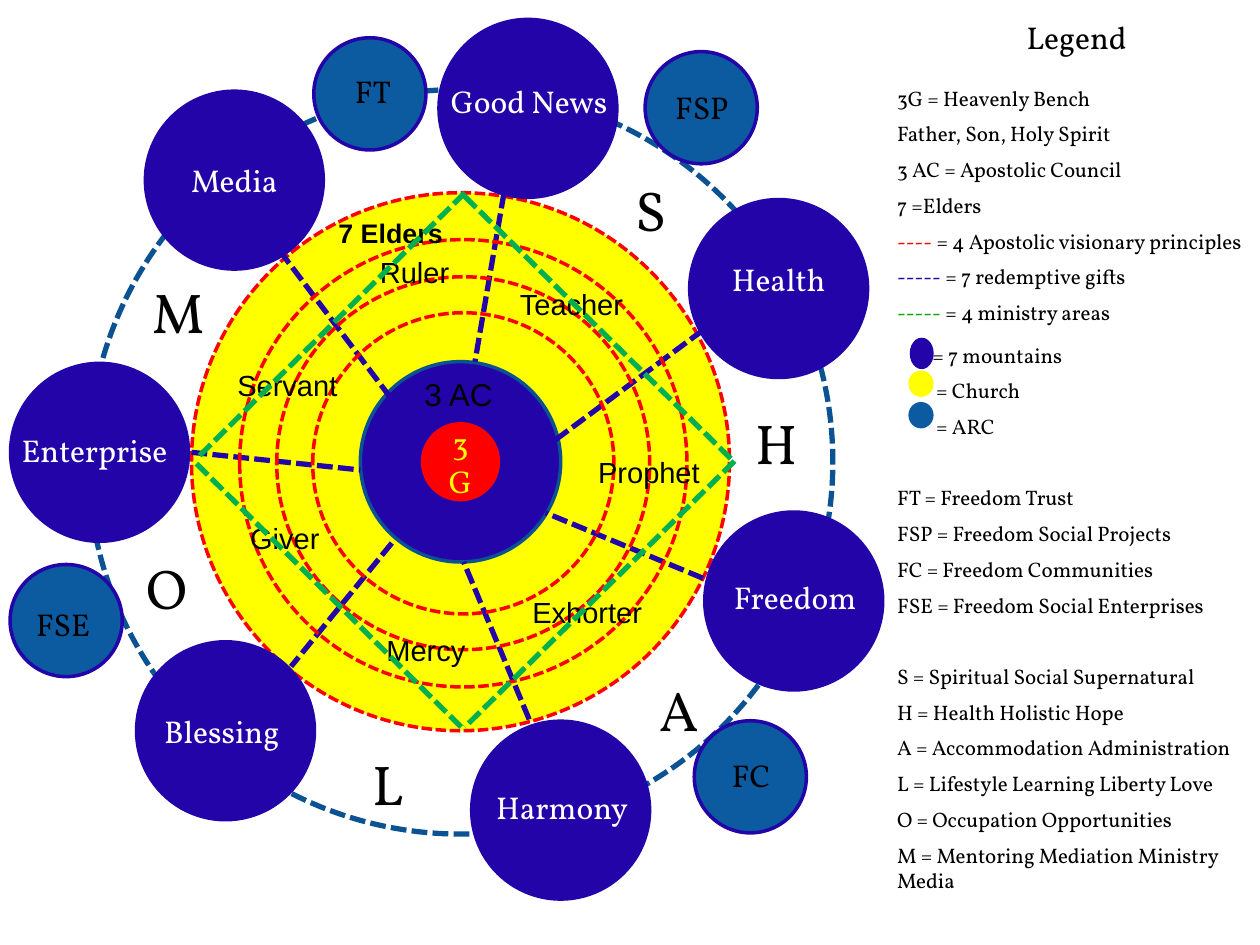
import pptx
import pptx.dml.color
import pptx.enum.dml
import pptx.enum.shapes
import pptx.enum.text
import pptx.oxml.ns
import pptx.util
import lxml.etree

COLUMNS, ROWS = 100, 75
CELL = pptx.util.Inches(0.1)
SERIF, SANS = "Vollkorn", "Arial"
COLORS = {
    "white": "FFFFFF", "black": "000000", "yellow": "FFFF00", "red": "FF0000",
    "navy": "2304A8", "orbit": "0B5292", "arc": "0C5AA0",
    "diamond": "00B050", "green": "00A800",
}
CENTER = (36.55, 36.65)
RING_CENTER = (36.77, 36.77)
RING_DIAMETERS = [23.9, 29.6, 35.5]
MOUNTAIN_DIAMETER, ARC_DIAMETER = 14.4, 8.9

MOUNTAINS = [
    ("Good News", (41.9, 8.6), (35.3, 6.5)),
    ("Freedom", (63, 47.7), (56.4, 45.9)),
    ("Harmony", (44.5, 64.3), (37.9, 62.5)),
    ("Enterprise", (7.9, 35.9), (0.8, 34.2)),
    ("Media", (18.6, 14.3), (11.9, 12.8)),
    ("Blessing", (17.9, 58), (10.9, 56.5)),
    ("Health", (61.8, 22.9), (55.1, 20.6)),
]
SPOKES = [
    ((40, 15.3), (37.7, 28.7)), ((55.8, 26.2), (44.1, 34.9)),
    ((22.2, 19.9), (31.1, 31.7)), ((15.2, 35.9), (28.6, 37.3)),
    ((55.8, 45.9), (43.3, 40.7)), ((42, 57.1), (36.8, 44.6)),
    ((31.1, 43.1), (23.1, 52.9)),
]
ARCS = [
    ("FSP", (55.65, 8.55), (53.3, 7)), ("FSE", (5.25, 49.25), (2.6, 48)),
    ("FC", (59.55, 61.65), (57.2, 60)), ("FT", (29.35, 7.45), (27.2, 5.7)),
]
LETTERS = [
    ("S", (47.3, 13.9)), ("H", (57.3, 32.4)), ("A", (49.6, 53.6)),
    ("L", (26.5, 59.5)), ("O", (8.9, 43.9)), ("M", (9.8, 22)),
]
GIFTS = [
    ("Ruler", (28.5, 20.2), 8.8), ("Servant", (18.4, 29.2), 8.8),
    ("Giver", (18.2, 41.3), 8.8), ("Mercy", (29.4, 50.2), 8.8),
    ("Exhorter", (41.4, 47.2), 10.4), ("Prophet", (47.1, 36.1), 8.8),
    ("Teacher", (40.1, 22.7), 10.5),
]
DIAMOND = [
    ((36.9, 15.3), (15.6, 36.4)), ((15.6, 36.8), (36.9, 58)),
    ((36.9, 15.6), (58.3, 36.7)), ((58.3, 36.6), (36.9, 57.7)),
]
LEGEND = [
    ("3G = Heavenly Bench", 17, 0), ("Father, Son, Holy Spirit", 0, 0),
    ("3 AC = Apostolic Council", 0, 0), ("7 =Elders", 0, 0),
    (("----", "red", " = 4 Apostolic visionary principles"), 0, 0),
    (("-----", "navy", " = 7 redemptive gifts"), 0, 0),
    (("-----", "green", " = 4 ministry areas"), 0, 0),
    ("= 7 mountains", 4, 2.8), ("= Church", 0, 3.1), ("= ARC", 0, 3.1),
    ("FT = Freedom Trust", 20.4, 0), ("FSP = Freedom Social Projects", 0, 0),
    ("FC = Freedom Communities", 0, 0), ("FSE = Freedom Social Enterprises", 0, 0),
    ("S = Spiritual Social Supernatural", 20.4, 0), ("H = Health Holistic Hope", 0, 0),
    ("A = Accommodation Administration", 0, 0),
    ("L = Lifestyle Learning Liberty Love", 0, 0),
    ("O = Occupation Opportunities", 0, 0),
    ("M = Mentoring Mediation Ministry Media", 0, 0),
]
SWATCHES = [
    ("navy", (73.15, 28.05), 1.9, 2.5), ("yellow", (73.1, 30.45), 2, 2.1),
    ("arc", (73.1, 32.95), 2, 2.1),
]


def cells(*counts):
    return [round(count * CELL) for count in counts]


def rgb(name):
    return pptx.dml.color.RGBColor.from_string(COLORS[name])


def style_line(line, color, width, dashed):
    line.color.rgb = rgb(color)
    line.width = pptx.util.Pt(width)
    if dashed:
        line.dash_style = pptx.enum.dml.MSO_LINE.SQUARE_DOT


def style_font(font, size, color, family, bold=False):
    font.size = pptx.util.Pt(size)
    font.color.rgb = rgb(color)
    font.name = family
    font.bold = bold


def add_ellipse(slide, center, width, height=None, fill=None, line=None, line_width=2, dashed=False):
    height = height or width
    left, top = center[0] - width / 2, center[1] - height / 2
    shape = slide.shapes.add_shape(
        pptx.enum.shapes.MSO_SHAPE.OVAL, *cells(left, top, width, height))
    shape.shadow.inherit = False
    if fill:
        shape.fill.solid()
        shape.fill.fore_color.rgb = rgb(fill)
    else:
        shape.fill.background()
    if line:
        style_line(shape.line, line, line_width, dashed)
    else:
        shape.line.fill.background()
    return shape


def add_dashes(slide, start, end, color):
    connector = slide.shapes.add_connector(
        pptx.enum.shapes.MSO_CONNECTOR.STRAIGHT, *cells(*start, *end))
    style_line(connector.line, color, 3, True)
    lxml.etree.SubElement(connector._element.spPr, pptx.oxml.ns.qn("a:effectLst"))


def write_centered(paragraph, text, size, color, family, bold=False):
    paragraph.text = text
    paragraph.alignment = pptx.enum.text.PP_ALIGN.CENTER
    style_font(paragraph.font, size, color, family, bold)


def add_text_frame(slide, corner, width, height):
    frame = slide.shapes.add_textbox(*cells(*corner, width, height)).text_frame
    frame.word_wrap = True
    frame.margin_left = frame.margin_right = frame.margin_top = frame.margin_bottom = 0
    return frame


def add_label(slide, text, corner, width, height, size, color="black", family=SERIF, bold=False):
    frame = add_text_frame(slide, corner, width, height)
    write_centered(frame.paragraphs[0], text, size, color, family, bold)


def add_rings(slide):
    add_ellipse(slide, CENTER, 59.1, fill="white", line="orbit", line_width=3, dashed=True)
    add_ellipse(slide, CENTER, 42.7, fill="yellow", line="red", dashed=True)
    add_ellipse(slide, CENTER, 15.9, fill="navy", line="orbit")
    core = add_ellipse(slide, CENTER, 6.3, fill="red")
    core.text_frame.vertical_anchor = pptx.enum.text.MSO_ANCHOR.MIDDLE
    write_centered(core.text_frame.paragraphs[0], "3 G", 18, "yellow", SERIF)


def add_legend(slide):
    frame = add_text_frame(slide, (71.2, 1.4), 28.5, 73.6)
    write_centered(frame.paragraphs[0], "Legend", 18, "black", SERIF)
    for entry, space_before, indent in LEGEND:
        paragraph = frame.add_paragraph()
        paragraph.space_before = pptx.util.Pt(space_before)
        paragraph.space_after = pptx.util.Pt(6)
        style_font(paragraph.font, 12, "black", SERIF)
        if indent:
            properties = paragraph._p.get_or_add_pPr()
            properties.set("marL", str(cells(indent)[0]))
            properties.set("indent", "0")
        if isinstance(entry, str):
            paragraph.text = entry
        else:
            dashes, color, meaning = entry
            run = paragraph.add_run()
            run.text = dashes
            run.font.color.rgb = rgb(color)
            paragraph.add_run().text = meaning
    for color, center, width, height in SWATCHES:
        add_ellipse(slide, center, width, height, fill=color)


def main():
    presentation = pptx.Presentation()
    presentation.slide_width, presentation.slide_height = cells(COLUMNS, ROWS)
    slide = presentation.slides.add_slide(presentation.slide_layouts[6])
    add_rings(slide)
    for name, center, corner in MOUNTAINS:
        add_ellipse(slide, center, MOUNTAIN_DIAMETER, fill="navy")
    for start, end in SPOKES:
        add_dashes(slide, start, end, "navy")
    for diameter in RING_DIAMETERS:
        add_ellipse(slide, RING_CENTER, diameter, line="red", dashed=True)
    for name, center, corner in MOUNTAINS:
        add_label(slide, name, corner, 13.4, 4.1, 18, "white")
    add_label(slide, "3 AC", (29.7, 29.8), 13.4, 3.5, 18, family=SANS)
    for name, center, corner in ARCS:
        add_ellipse(slide, center, ARC_DIAMETER, fill="arc", line="navy")
        add_label(slide, name, corner, 4.8, 3, 18)
    for letter, corner in LETTERS:
        add_label(slide, letter, corner, 8.7, 5.1, 32)
    for gift, corner, width in GIFTS:
        add_label(slide, gift, corner, width, 2.7, 16.6, family=SANS)
    add_label(slide, "7 Elders", (26.6, 17.2), 8.8, 2.7, 15.3, family=SANS, bold=True)
    for start, end in DIAMOND:
        add_dashes(slide, start, end, "diamond")
    add_legend(slide)
    presentation.save("out.pptx")


if __name__ == "__main__":
    main()
